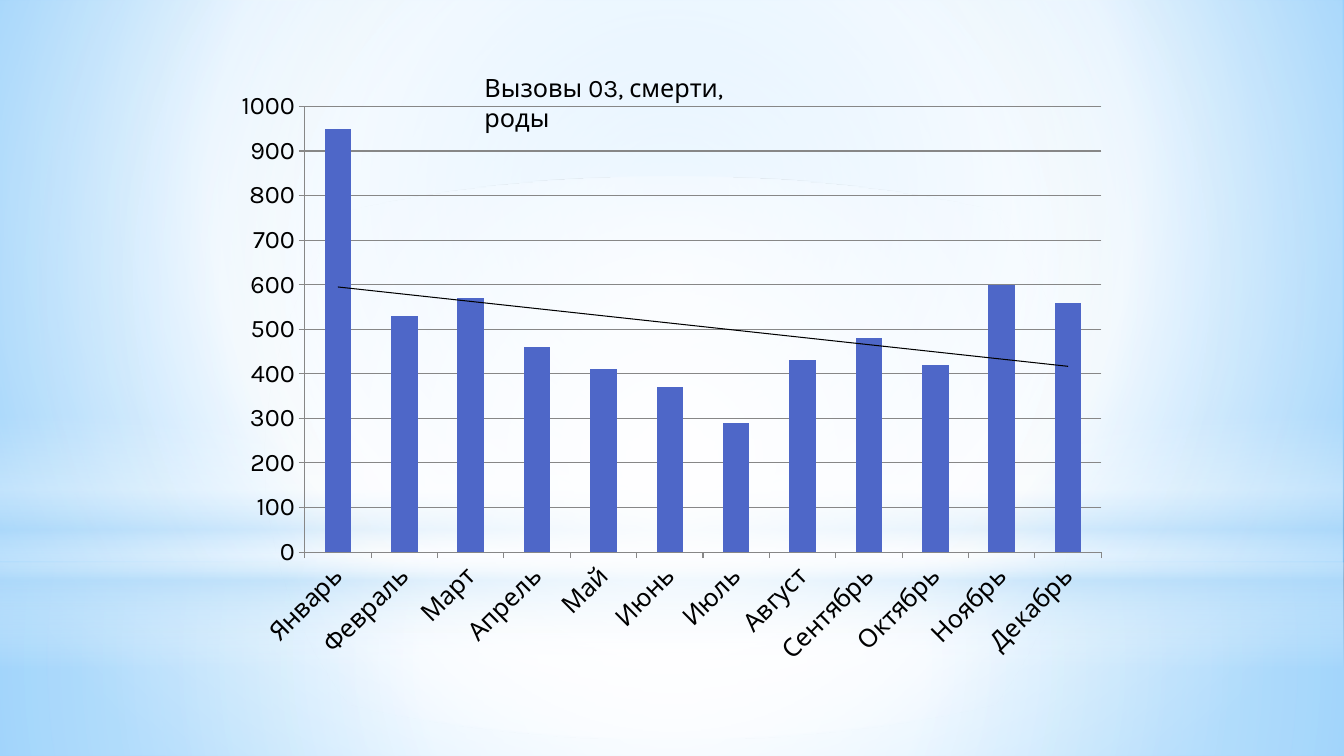
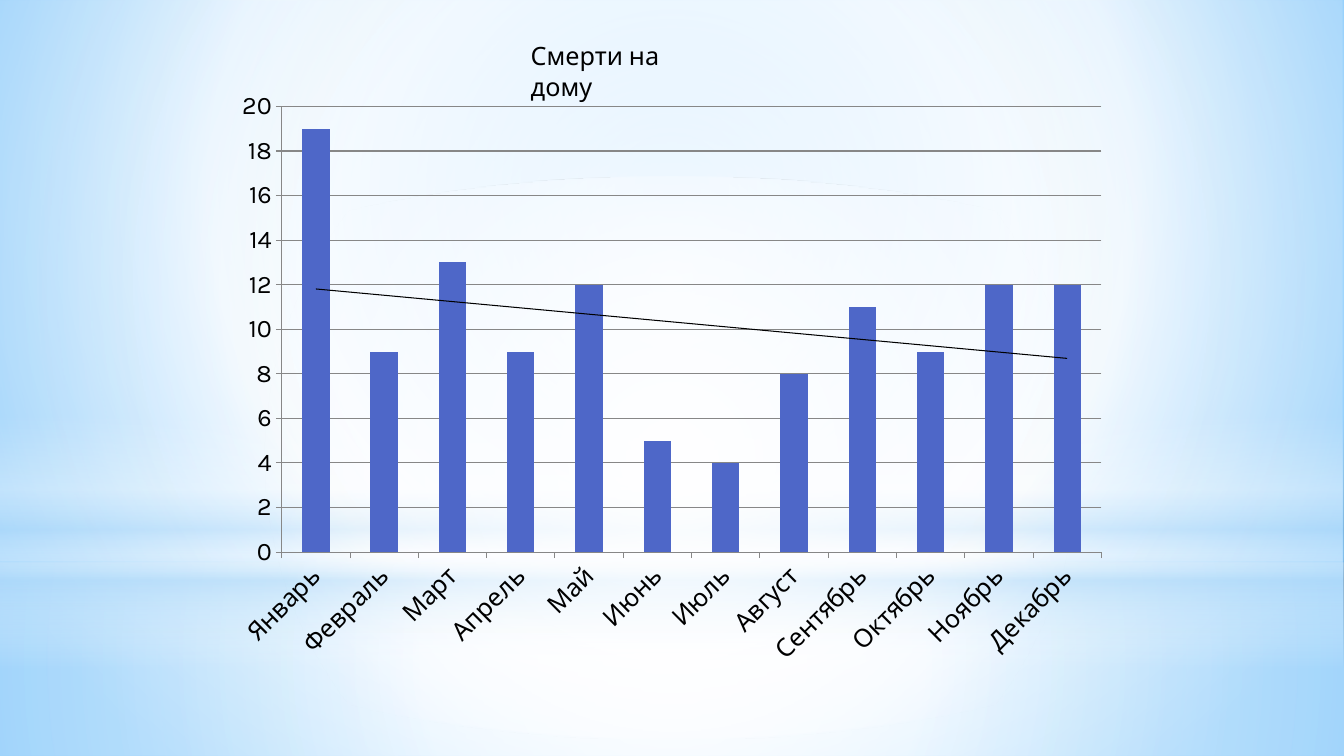
from lxml import etree
from pptx import Presentation
from pptx.chart.data import CategoryChartData
from pptx.dml.color import RGBColor
from pptx.enum.chart import XL_CHART_TYPE, XL_TICK_MARK
from pptx.enum.shapes import MSO_SHAPE
from pptx.enum.text import MSO_ANCHOR, PP_ALIGN
from pptx.oxml import parse_xml
from pptx.oxml.ns import nsdecls, qn
from pptx.util import Emu, Pt

COLUMN = XL_CHART_TYPE.COLUMN_CLUSTERED
TICK_OUT = XL_TICK_MARK.OUTSIDE
RECT, OVAL = MSO_SHAPE.RECTANGLE, MSO_SHAPE.OVAL
LEFT, TOP = PP_ALIGN.LEFT, MSO_ANCHOR.TOP

SCALE = 9525
W, H = 1280, 720
BLACK, WHITE, GRID = "000000", "FFFFFF", "878787"
SKY, DEEP, PALE, BAR = "9ED5FF", "5BB9FF", "B4DCFA", "4E67C8"
FONT = {"name": "Karla", "size": Pt(18)}
CENTER = (50, 50, 50, 50)

BACKGROUND = ([(0, SKY, 100), (60, WHITE, 100), (100, DEEP, 100)], (20, 10, 20, 60))
BANDS = [
    (RECT, (0, 536, W, 184), [(0, WHITE, 91), (37, WHITE, 76), (100, PALE, 79)], CENTER),
    (RECT, (0, 0, W, 536), [(0, WHITE, 89), (48, WHITE, 62), (100, PALE, 79)], CENTER),
    (RECT, (0, 396, W, 240), [(0, WHITE, 0), (29, WHITE, 30), (45, PALE, 40),
                              (55, WHITE, 26), (65, PALE, 60), (100, WHITE, 0)], None),
    (OVAL, (0, 168, W, 536), [(0, WHITE, 100), (56, WHITE, 0)], CENTER),
]
CHART_BOX = (213, 76, 853, 569)
MONTHS = ["Январь", "Февраль", "Март", "Апрель", "Май", "Июнь", "Июль",
          "Август", "Сентябрь", "Октябрь", "Ноябрь", "Декабрь"]


def px(*values):
    return [Emu(v * SCALE) for v in values]


def rgb(color):
    return RGBColor.from_string(color)


def set_attrs(obj, values):
    for name, value in values.items():
        setattr(obj, name, value)


def set_gradient(element, fill, stops, focus):
    fill.gradient()
    old = next(element.iter(qn("a:gradFill")))
    gs = "".join(
        f'<a:gs pos="{pos * 1000}"><a:srgbClr val="{color}">'
        f'<a:alpha val="{alpha * 1000}"/></a:srgbClr></a:gs>'
        for pos, color, alpha in stops)
    if focus:
        l, t, r, b = (v * 1000 for v in focus)
        shade = (f'<a:path path="circle"><a:fillToRect l="{l}" t="{t}" '
                 f'r="{r}" b="{b}"/></a:path>')
    else:
        shade = '<a:lin ang="5400000" scaled="0"/>'
    new = parse_xml(f'<a:gradFill {nsdecls("a")} rotWithShape="1">'
                    f'<a:gsLst>{gs}</a:gsLst>{shade}</a:gradFill>')
    old.getparent().replace(old, new)


class Deck:
    def __init__(self):
        self.prs = Presentation()
        self.prs.slide_width, self.prs.slide_height = px(W, H)
        self.s = None

    def slide(self):
        self.s = self.prs.slides.add_slide(self.prs.slide_layouts[6])

    def backdrop(self):
        master = self.prs.slide_master
        set_gradient(master.element, master.background.fill, *BACKGROUND)
        for kind, box, stops, focus in BANDS:
            sp = self.s.shapes.add_shape(kind, *px(*box))
            sp.shadow.inherit = False
            sp.line.fill.background()
            set_gradient(sp.element, sp.fill, stops, focus)
            master.shapes.element.append(sp.element)

    def title(self, text, box):
        tf = self.s.shapes.add_textbox(*px(*box)).text_frame
        set_attrs(tf, {"word_wrap": True, "vertical_anchor": TOP})
        p = tf.paragraphs[0]
        p.alignment = LEFT
        r = p.add_run()
        r.text = text
        set_attrs(r.font, FONT)
        r.font.color.rgb = rgb(BLACK)

    def chart(self, values, top, step):
        data = CategoryChartData()
        data.categories = MONTHS
        data.add_series("Series 1", values)
        chart = self.s.shapes.add_chart(COLUMN, *px(*CHART_BOX), data).chart
        set_attrs(chart, {"has_title": False, "has_legend": False})
        set_attrs(chart.font, FONT)
        chart.font.color.rgb = rgb(BLACK)
        plot = chart.plots[0]
        set_attrs(plot, {"gap_width": 150, "vary_by_categories": False})

        cat, val = chart.category_axis, chart.value_axis
        set_attrs(val, {"minimum_scale": 0, "maximum_scale": top,
                        "major_unit": step, "has_major_gridlines": True})
        for axis in (cat, val):
            axis.major_tick_mark = TICK_OUT
            set_attrs(axis.tick_labels.font, FONT)
        for line in (cat.format.line, val.format.line, val.major_gridlines.format.line):
            line.color.rgb = rgb(GRID)
            line.width = Pt(0.75)
        next(cat.tick_labels.font._element.iterancestors(qn("c:txPr"))).find(
            qn("a:bodyPr")).set("rot", "-2700000")

        series = plot.series[0]
        series.format.fill.solid()
        series.format.fill.fore_color.rgb = rgb(BAR)
        self.trend(series)

    def trend(self, series):
        line = parse_xml(f'<c:trendline {nsdecls("c", "a")}><c:spPr/></c:trendline>')
        ln = etree.SubElement(line[0], qn("a:ln"), w="9525")
        fill = etree.SubElement(ln, qn("a:solidFill"))
        etree.SubElement(fill, qn("a:srgbClr"), val=BLACK)
        for tag, value in (("trendlineType", "linear"), ("dispRSqr", "0"), ("dispEq", "0")):
            etree.SubElement(line, qn(f"c:{tag}"), val=value)
        series._element.find(qn("c:cat")).addprevious(line)


def main():
    deck = Deck()

    deck.slide()
    deck.backdrop()
    deck.title("Вызовы 03, смерти, роды", (452, 64, 305, 38))
    deck.chart([950, 530, 570, 460, 410, 370, 290, 430, 480, 420, 600, 560], 1000, 100)

    deck.slide()
    deck.chart([19, 9, 13, 9, 12, 5, 4, 8, 11, 9, 12, 12], 20, 2)
    deck.title("Смерти на дому", (496, 34, 198, 38))

    deck.prs.save("out.pptx")


if __name__ == "__main__":
    main()
